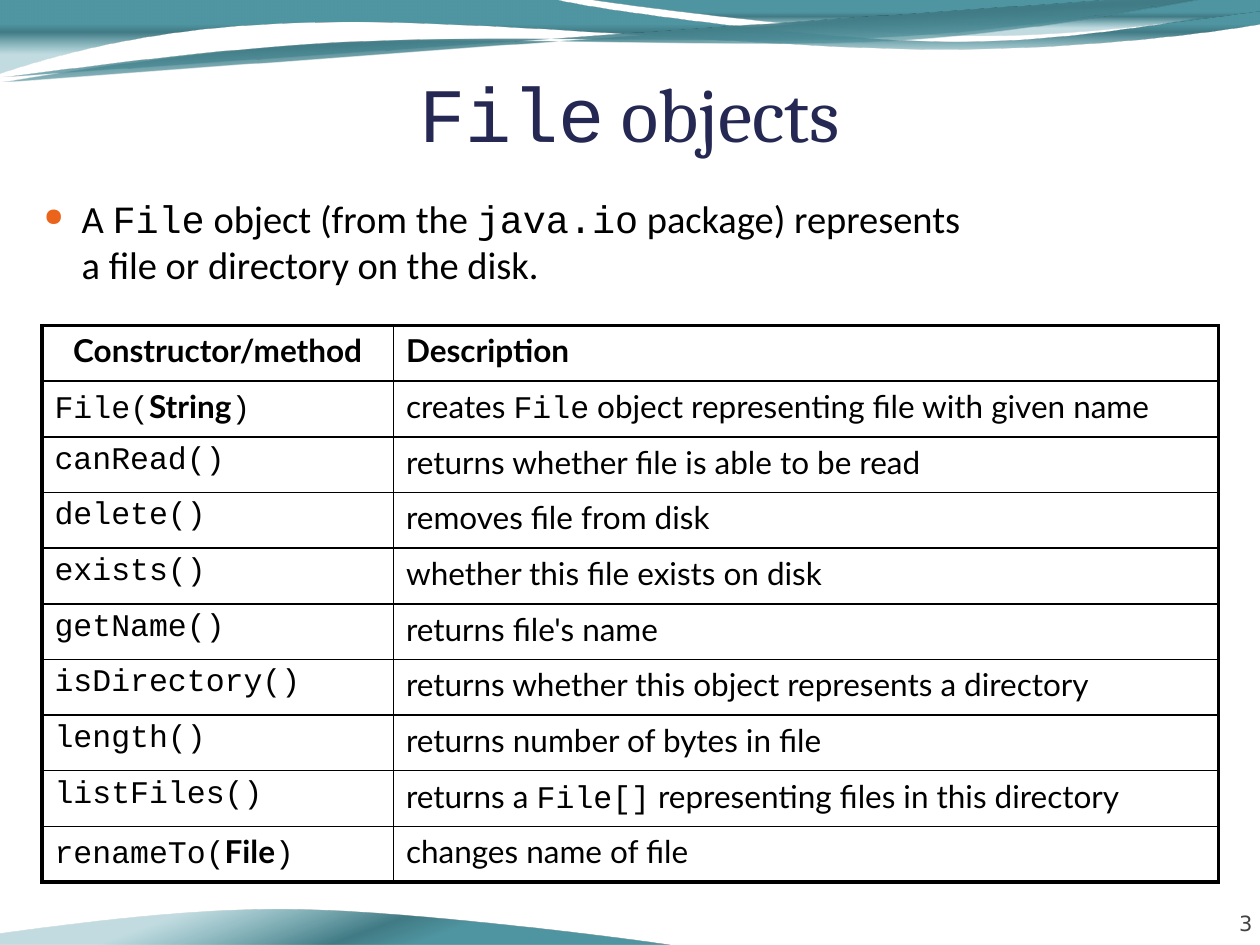
import math
from dataclasses import dataclass

from lxml import etree
from pptx import Presentation
from pptx import util as u
from pptx.dml.color import RGBColor
from pptx.enum import text
from pptx.oxml import parse_xml
from pptx.oxml.ns import nsdecls, qn

COLUMNS, ROWS = 100, 75
UNIT = u.Inches(10) / COLUMNS
BLACK, WHITE, NAVY, GREY, ORANGE = "000000", "FFFFFF", "242852", "424242", "EB641B"
MONO = "Courier New"
GRADIENT = ((33, "5096A2", 100), (44, "417B85", 100), (74, "5AA2AE", 37))


@dataclass(frozen=True)
class Box:
    """A rectangle in grid columns and rows."""
    left: float
    top: float
    width: float
    height: float

    def lengths(self) -> list:
        """Return left, top, width and height as slide lengths."""
        return [grid(v) for v in (self.left, self.top, self.width, self.height)]


@dataclass(frozen=True)
class Span:
    """A stretch of text in one font."""
    words: str
    font: str = "Lato"
    bold: bool = False


@dataclass(frozen=True)
class Wave:
    """An outline; a point pair is a line, six numbers are a curve."""
    box: Box
    start: tuple
    steps: tuple
    rotation: float = 0
    angle: int = 90
    closed: bool = True


WAVES = (
    Wave(Box(-0.1, 0, 100.2, 5.8), (0, 0), (
        (44, 0), (47.6, 0.9, 66.4, 3.3, 75.8, 3.3), (85.3, 3.3, 95.8, 1.4, 100, 0.5),
        (100.1, 1.9), (98.3, 2.3, 87, 3.9, 74.6, 3.9), (62.2, 3.9, 38.2, 1.5, 25.7, 1.8),
        (12.9, 1.9, 4.6, 4.3, -0.1, 5.8), (0, 0))),
    Wave(Box(46.7, 0, 53.3, 3), (46.7, 0), (
        (49.8, 0.5, 67.4, 2.7, 76.3, 2.8), (85.2, 3, 96.1, 1.4, 100, 0.9), (100, 0),
        (46.7, 0))),
    Wave(Box(0, 1.6, 100.2, 2.8), (0.1, 6.5), (
        (5, 5.7, 16, 3.9, 27.9, 3.4), (39.8, 2.8, 59.3, 3.9, 71.4, 3.2),
        (83.4, 2.5, 94.1, 0, 100, -0.8)), 357.3, closed=False),
    Wave(Box(0, 1.6, 100.1, 2.5), (0.1, 6.1), (
        (4.9, 5.6, 16.6, 3.8, 28.5, 3.3), (40.4, 2.7, 59.7, 3.6, 71.6, 2.9),
        (83.6, 2.2, 94.1, -0.1, 100, -0.8)), 357.3, closed=False),
    Wave(Box(-0.1, 72, 53.3, 3), (53.2, 75), (
        (50.1, 74.5, 32.5, 72.3, 23.6, 72.2), (14.7, 72, 3.8, 73.6, -0.1, 74.1),
        (-0.1, 75), (53.2, 75)), 180, 70),
)

METHODS = (
    ([Span("Constructor/method", bold=True)], [Span("Description", bold=True)]),
    ([Span("File(", MONO), Span("String", bold=True), Span(")", MONO)],
     [Span("creates "), Span("File", MONO), Span(" object representing file with given name")]),
    ([Span("canRead()", MONO)], [Span("returns whether file is able to be read")]),
    ([Span("delete()", MONO)], [Span("removes file from disk")]),
    ([Span("exists()", MONO)], [Span("whether this file exists on disk")]),
    ([Span("getName()", MONO)], [Span("returns file's name")]),
    ([Span("isDirectory()", MONO)], [Span("returns whether this object represents a directory")]),
    ([Span("length()", MONO)], [Span("returns number of bytes in file")]),
    ([Span("listFiles()", MONO)],
     [Span("returns a "), Span("File[]", MONO), Span(" representing files in this directory")]),
    ([Span("renameTo(", MONO), Span("File", bold=True), Span(")", MONO)],
     [Span("changes name of file")]),
)


def grid(value: float) -> int:
    """Turn grid units into a slide length."""
    return u.Emu(round(value * UNIT))


def color(value: str) -> RGBColor:
    """Turn a hex string into a colour."""
    return RGBColor.from_string(value)


def write(paragraph, spans: list, size: float, ink: str) -> None:
    """Fill a paragraph with formatted spans, breaking lines at newlines."""
    for span in spans:
        for index, line in enumerate(span.words.split("\n")):
            if index:
                paragraph.add_line_break()
            run = paragraph.add_run()
            run.text = line
            run.font.name, run.font.size, run.font.bold = span.font, u.Pt(size), span.bold
            run.font.color.rgb = color(ink)


def add_text(page, box: Box, spans: list, size: float, ink: str, align=None,
             anchor=text.MSO_ANCHOR.TOP, insets=(0.1, 0.05, 0.1, 0.05)):
    """Add a wrapped text box and return its paragraph."""
    frame = page.shapes.add_textbox(*box.lengths()).text_frame
    frame.word_wrap, frame.vertical_anchor = True, anchor
    (frame.margin_left, frame.margin_top,
     frame.margin_right, frame.margin_bottom) = map(u.Inches, insets)
    paragraph = frame.paragraphs[0]
    paragraph.alignment = align
    write(paragraph, spans, size, ink)
    return paragraph


def add_bullet(paragraph) -> None:
    """Give a paragraph a hanging round bullet."""
    props = paragraph._p.get_or_add_pPr()
    props.set("marL", str(u.Inches(0.3)))
    props.set("indent", str(-u.Inches(0.3)))
    tint = etree.SubElement(props, qn("a:buClr"))
    etree.SubElement(tint, qn("a:srgbClr"), val=ORANGE)
    etree.SubElement(props, qn("a:buSzPct"), val="65000")
    etree.SubElement(props, qn("a:buChar"), char="●")


def turn_back(wave: Wave, x: float, y: float) -> tuple:
    """Give a point's place before the wave is rotated about its centre."""
    turn = math.radians(-wave.rotation)
    mid_x = wave.box.left + wave.box.width / 2
    mid_y = wave.box.top + wave.box.height / 2
    across, down = x - mid_x, y - mid_y
    return (grid(mid_x + across * math.cos(turn) - down * math.sin(turn)),
            grid(mid_y + across * math.sin(turn) + down * math.cos(turn)))


def add_wave(page, wave: Wave) -> None:
    """Draw a wave with true curves and the shared gradient."""
    points = [turn_back(wave, *step[i:i + 2])
              for step in wave.steps for i in range(0, len(step), 2)]
    builder = page.shapes.build_freeform(*turn_back(wave, *wave.start))
    builder.add_line_segments(points, close=wave.closed)
    shape = builder.convert_to_shape()
    shape.rotation = wave.rotation
    shape.shadow.inherit = False
    shape.line.fill.background()
    geometry = shape._element.spPr.find(qn("a:custGeom"))
    lines = iter(list(geometry.iter(qn("a:lnTo"))))
    for step in wave.steps:
        first = next(lines)
        if len(step) == 6:
            first.tag = qn("a:cubicBezTo")
            for _ in range(2):
                extra = next(lines)
                first.append(extra[0])
                extra.getparent().remove(extra)
    stops = "".join(
        f'<a:gs pos="{at * 1000}"><a:srgbClr val="{tint}"><a:alpha val="{alpha * 1000}"/>'
        "</a:srgbClr></a:gs>" for at, tint, alpha in GRADIENT)
    geometry.addnext(parse_xml(
        f'<a:gradFill {nsdecls("a")} rotWithShape="1"><a:gsLst>{stops}</a:gsLst>'
        f'<a:lin ang="{wave.angle * 60000}" scaled="0"/></a:gradFill>'))


def set_borders(cell, outer: dict) -> None:
    """Draw thick borders on the outer sides and thin ones elsewhere."""
    props = cell._tc.get_or_add_tcPr()
    for index, (side, thick) in enumerate(outer.items()):
        width = u.Pt(2.25 if thick else 1)
        props.insert(index, parse_xml(
            f'<a:{side} {nsdecls("a")} w="{width}"><a:solidFill><a:srgbClr val="{BLACK}"/>'
            f"</a:solidFill></a:{side}>"))


def add_methods(page, box: Box, widths: tuple) -> None:
    """Add the table of methods."""
    last_row, last_column = len(METHODS) - 1, len(widths) - 1
    table = page.shapes.add_table(len(METHODS), len(widths), *box.lengths()).table
    for column, width in zip(table.columns, widths):
        column.width = grid(width)
    for r, method in enumerate(METHODS):
        table.rows[r].height = grid(box.height / len(METHODS))
        for c, spans in enumerate(method):
            cell = table.cell(r, c)
            cell.fill.solid()
            cell.fill.fore_color.rgb = color(WHITE)
            paragraph = cell.text_frame.paragraphs[0]
            if (r, c) == (0, 0):
                paragraph.alignment = text.PP_ALIGN.CENTER
            write(paragraph, spans, 18, BLACK)
            set_borders(cell, {"lnL": c == 0, "lnR": c == last_column,
                               "lnT": r == 0, "lnB": r == last_row})


def main() -> None:
    """Build the slide about File objects."""
    deck = Presentation()
    deck.slide_width, deck.slide_height = grid(COLUMNS), grid(ROWS)
    page = deck.slides.add_slide(deck.slide_layouts[6])
    add_text(page, Box(91.1, 70.3, 8.3, 4), [Span("3", "DejaVu Sans")], 12, GREY,
             text.PP_ALIGN.RIGHT, text.MSO_ANCHOR.BOTTOM, (0, 0, 0, 0))
    for wave in WAVES:
        add_wave(page, wave)
    add_text(page, Box(5, 4.8, 90, 7.7), [Span("File", MONO), Span(" objects", "Cambria")],
             44, NAVY, text.PP_ALIGN.CENTER, text.MSO_ANCHOR.BOTTOM, (0, 0.05, 0, 0))
    add_bullet(add_text(page, Box(2.5, 15, 97.5, 56.7), [
        Span("A ", "Calibri"), Span("File", MONO), Span(" object (from the ", "Calibri"),
        Span("java.io", MONO),
        Span(" package) represents\na file or directory on the disk.", "Calibri")], 22, BLACK))
    add_methods(page, Box(3.33, 25.83, 93.4, 44.2), (27.9, 65.5))
    deck.save("out.pptx")


if __name__ == "__main__":
    main()
